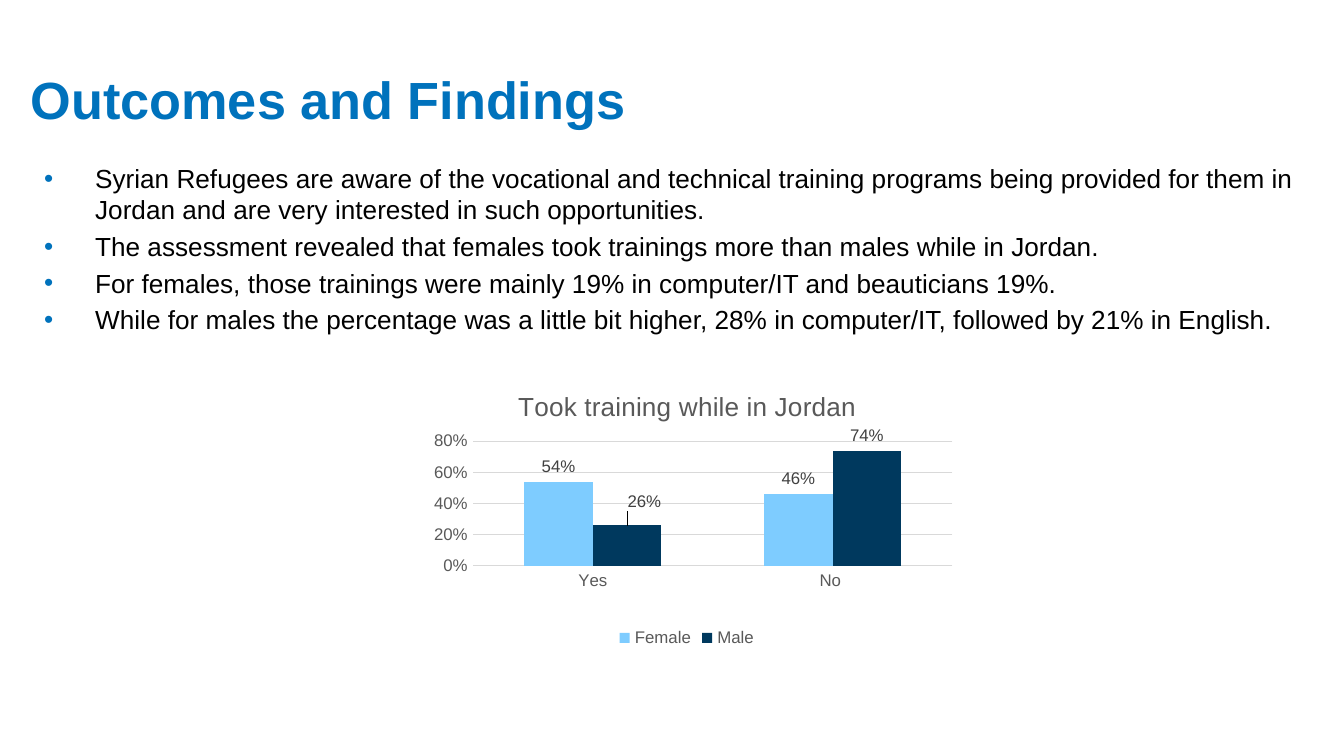
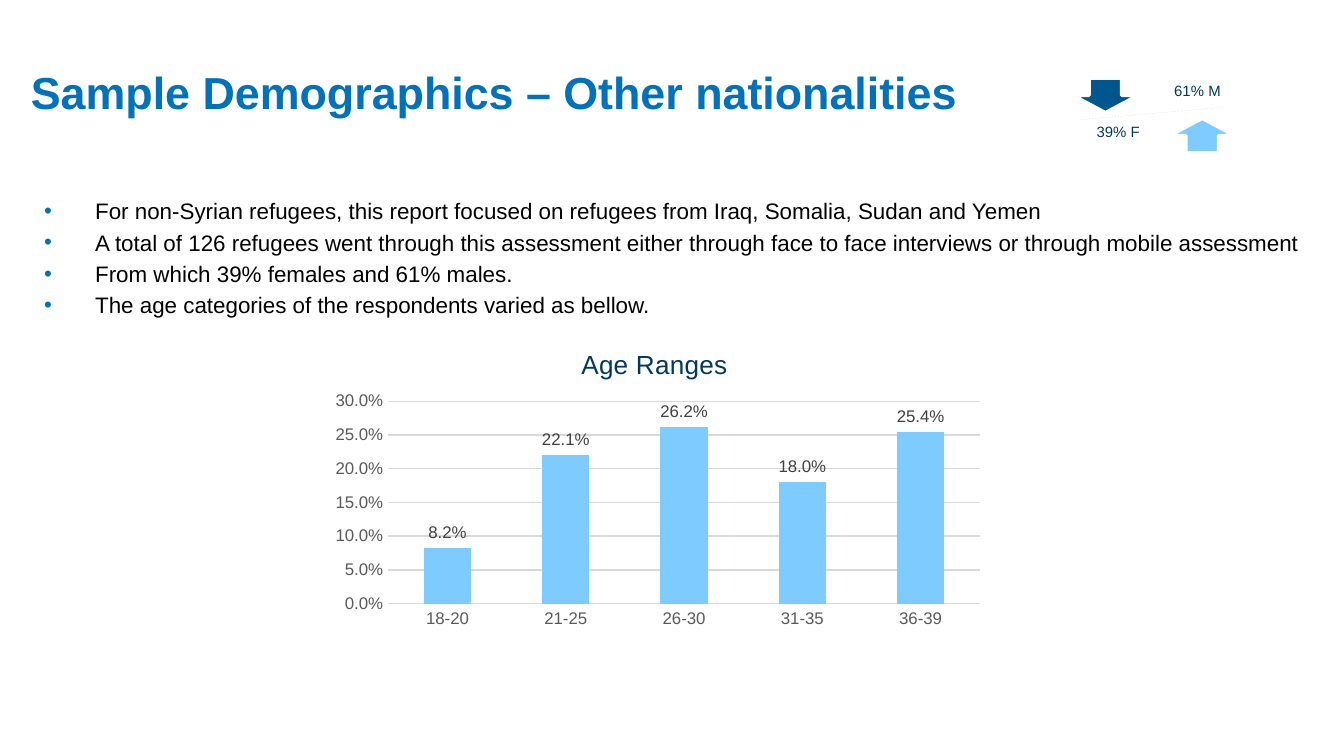
from lxml.etree import SubElement as Sub
from pptx import Presentation
from pptx.chart.data import CategoryChartData as Data
from pptx.dml.color import RGBColor as Rgb
from pptx.enum.chart import XL_CHART_TYPE as Kind
from pptx.enum.chart import XL_LABEL_POSITION as Spot
from pptx.enum.chart import XL_LEGEND_POSITION as Side
from pptx.enum.chart import XL_TICK_MARK as Tick
from pptx.enum.shapes import MSO_SHAPE as Form
from pptx.enum.text import MSO_ANCHOR as Anchor
from pptx.enum.text import PP_ALIGN as Align
from pptx.oxml.ns import qn
from pptx.util import Inches, Pt

HUES = {
    "blue": "0072BC", "navy": "00395E", "deep": "00568D", "sky": "7ECCFF",
    "black": "000000", "white": "FFFFFF", "dark": "404040", "gray": "595959",
    "grid": "D9D9D9", "rule": "B4B4B4",
}
FACE = "Arial"
C15 = "http://schemas.microsoft.com/office/drawing/2012/chart"


def hue(name):
    return Rgb.from_string(HUES[name])


def apply(item, **form):
    for key, value in form.items():
        setattr(item, key, value)


def style(font, size, tone, bold=False):
    apply(font, name=FACE, size=Pt(size), bold=bold)
    font.color.rgb = hue(tone)


def add_box(shapes, area, pads, anchor):
    frame = shapes.add_textbox(*map(Inches, area)).text_frame
    sides = ("margin_left", "margin_top", "margin_right", "margin_bottom")
    apply(frame, word_wrap=True, vertical_anchor=anchor,
          **dict(zip(sides, map(Inches, pads))))
    return frame


def add_title(slide, text, size, top, height, foot=0):
    frame = add_box(slide.shapes, (0.23, top, 9.57, height),
                    (0, 0, 0, foot), Anchor.BOTTOM)
    para = frame.paragraphs[0]
    apply(para, text=text, line_spacing=0.9)
    style(para.font, size, "blue", True)


def add_dot(para):
    props = para._p.get_or_add_pPr()
    indent = Inches(0.38)
    props.set("marL", str(indent))
    props.set("indent", str(-indent))
    tone = Sub(props, qn("a:buClr"))
    Sub(tone, qn("a:srgbClr"), val=HUES["blue"])
    Sub(props, qn("a:buFont"), typeface=FACE)
    Sub(props, qn("a:buChar"), char="•")


def add_list(slide, lines, size, top, height):
    frame = add_box(slide.shapes, (0.23, top, 9.57, height),
                    (0.1, 0.05, 0.1, 0), Anchor.TOP)
    for i, line in enumerate(lines):
        para = frame.add_paragraph() if i else frame.paragraphs[0]
        para.text = line
        add_dot(para)
        if i:
            para.space_before = Pt(size / 5)
        style(para.font, size, "black")


def add_form(shapes, form, area, tone, turn=0):
    shape = shapes.add_shape(form, *map(Inches, area))
    shape.rotation = turn
    shape.shadow.inherit = False
    shape.fill.solid()
    shape.fill.fore_color.rgb = hue(tone)
    shape.line.color.rgb = hue("white")
    shape.line.width = Pt(2)


def add_tag(shapes, text, area):
    frame = add_box(shapes, area, [0.06] * 4, Anchor.MIDDLE)
    para = frame.paragraphs[0]
    apply(para, text=text, alignment=Align.CENTER, line_spacing=0.9)
    style(para.font, 8, "navy")


def set_place(node, index, **marks):
    for old in node.findall(qn("c:layout")):
        node.remove(old)
    layout = Sub(node, qn("c:layout"))
    manual = Sub(layout, qn("c:manualLayout"))
    for key, value in marks.items():
        Sub(manual, qn("c:" + key), val=str(value))
    node.insert(index, layout)


def set_head(chart, text, tone, left, top):
    chart.has_title = True
    title = chart.chart_title
    title.include_in_layout = False
    para = title.text_frame.paragraphs[0]
    para.text = text
    style(para.runs[0].font, 14, tone)
    set_place(title._element, 1, xMode="edge", yMode="edge", x=left, y=top)


def set_axes(chart, form, peak, step):
    for axis in (chart.category_axis, chart.value_axis):
        apply(axis, major_tick_mark=Tick.NONE, minor_tick_mark=Tick.NONE)
        axis.format.line.fill.background()
        style(axis.tick_labels.font, 9, "gray")
    axis = chart.value_axis
    apply(axis, minimum_scale=0, maximum_scale=peak, major_unit=step,
          has_major_gridlines=True)
    apply(axis.tick_labels, number_format=form, number_format_is_linked=False)
    line = axis.major_gridlines.format.line
    line.color.rgb = hue("grid")
    line.width = Pt(0.75)


def set_bars(chart, tones, form):
    plot = chart.plots[0]
    apply(plot, gap_width=150, vary_by_categories=False)
    for bars, tone in zip(plot.series, tones):
        bars.format.fill.solid()
        bars.format.fill.fore_color.rgb = hue(tone)
        tags = bars.data_labels
        apply(tags, show_value=True, number_format=form,
              number_format_is_linked=False, position=Spot.OUTSIDE_END)
        style(tags.font, 9, "dark")


def add_chart(slide, area, cats, rows, tones, form, scale, head, plot):
    data = Data(number_format=form)
    data.categories = cats
    for name, values in rows.items():
        data.add_series(name, values)
    chart = slide.shapes.add_chart(
        Kind.COLUMN_CLUSTERED, *map(Inches, area), data).chart
    style(chart.font, 10, "black")
    chart.has_legend = False
    set_head(chart, *head)
    set_axes(chart, form, *scale)
    set_bars(chart, tones, form)
    zone = chart._chartSpace.find(".//" + qn("c:plotArea"))
    set_place(zone, 0, layoutTarget="inner", xMode="edge", yMode="edge",
              **dict(zip("xywh", plot)))
    return chart


def add_key(chart):
    chart.has_legend = True
    apply(chart.legend, position=Side.BOTTOM, include_in_layout=False)
    style(chart.legend.font, 9, "gray")


def shift_tag(bars, index, right, down):
    tag = bars.points[index].data_label
    tag.position = Spot.OUTSIDE_END
    style(tag.font, 9, "dark")
    node = bars._element.find(".//" + qn("c:dLbl"))
    set_place(node, 1, x=right, y=down)
    extra = Sub(node.getparent(), qn("c:extLst"))
    ext = Sub(extra, qn("c:ext"), nsmap={"c15": C15},
              uri="{CE6537A1-D6FC-4f65-9D91-7224C49458BB}")
    Sub(ext, f"{{{C15}}}showLeaderLines", val="0")


def add_split(slide):
    shapes = slide.shapes.add_group_shape().shapes
    add_form(shapes, Form.MATH_MINUS, (7.82, 0.78, 1.49, 0.13), "rule", 355)
    add_form(shapes, Form.DOWN_ARROW, (7.98, 0.58, 0.49, 0.26), "deep")
    add_tag(shapes, "39% F", (8.06, 0.82, 0.52, 0.34))
    add_form(shapes, Form.UP_ARROW, (8.7, 0.88, 0.49, 0.26), "sky")
    add_tag(shapes, "61% M", (8.65, 0.55, 0.52, 0.27))


def add_finds(slide):
    add_title(slide, "Outcomes and Findings", 28, 0.29, 0.68)
    add_list(slide, (
        "Syrian Refugees are aware of the vocational and technical training "
        "programs being provided for them in Jordan and are very interested "
        "in such opportunities.",
        "The assessment revealed that females took trainings more than males "
        "while in Jordan.",
        "For females, those trainings were mainly 19% in computer/IT and "
        "beauticians 19%.",
        "While for males the percentage was a little bit higher, 28% in "
        "computer/IT, followed by 21% in English.",
    ), 14, 1.16, 3.56)
    chart = add_chart(
        slide, (2.96, 2.76, 4.3, 2.1), ("Yes", "No "),
        {"Female": (0.54, 0.46), "Male": (0.26, 0.74)}, ("sky", "navy"),
        "0%", (0.8, 0.2),
        ("Took training while in Jordan", "gray", 0.2, 0.05),
        (0.13, 0.25, 0.83, 0.44))
    add_key(chart)
    shift_tag(chart.plots[0].series[1], 0, 0.03, -0.03)


def add_sample(slide):
    add_title(slide, "Sample Demographics – Other nationalities",
              24, 0.22, 1.06, 0.42)
    add_list(slide, (
        "For non-Syrian refugees, this report focused on refugees from Iraq, "
        "Somalia, Sudan and Yemen",
        "A total of 126 refugees went through this assessment either through "
        "face to face interviews or through mobile assessment",
        "From which 39% females and 61% males.",
        "The age categories of the respondents varied as bellow.",
    ), 12, 1.42, 3.3)
    add_split(slide)
    add_chart(
        slide, (2.39, 2.44, 5, 2.28),
        ("18-20", "21-25", "26-30", "31-35", "36-39"),
        {"Series 1": (0.082, 0.221, 0.262, 0.18, 0.254)}, ("sky",),
        "0.0%", (0.3, 0.05), ("Age Ranges", "navy", 0.38, 0.05),
        (0.1, 0.24, 0.88, 0.66))


def main():
    deck = Presentation()
    wide = Inches(10)
    apply(deck, slide_width=wide, slide_height=wide * 9 // 16)
    for build in (add_finds, add_sample):
        build(deck.slides.add_slide(deck.slide_layouts[6]))
    deck.save("out.pptx")


if __name__ == "__main__":
    main()
